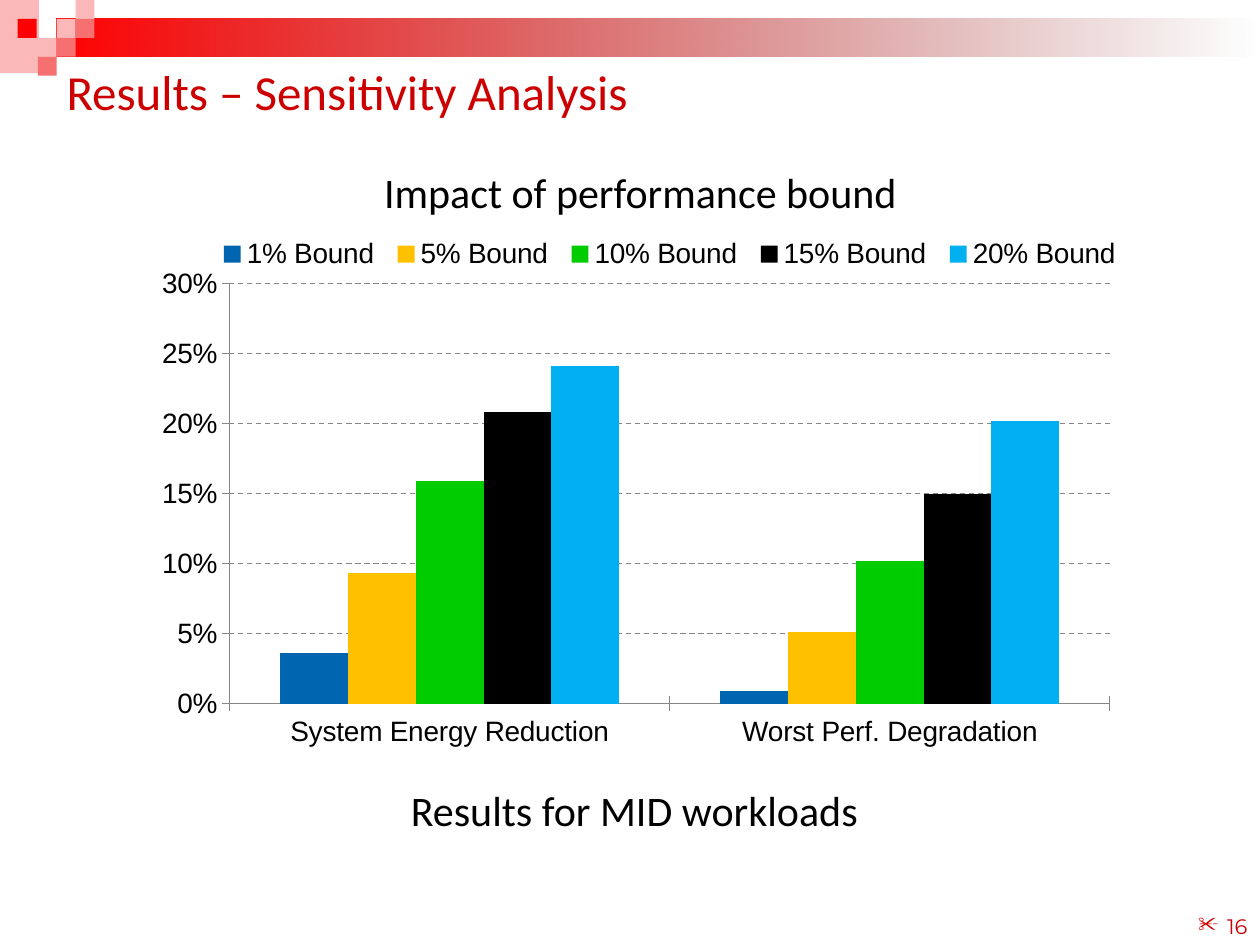
from typing import NamedTuple

from lxml import etree
from pptx import Presentation
from pptx.chart.data import CategoryChartData
from pptx.dml.color import RGBColor
from pptx.enum.chart import XL_CHART_TYPE, XL_LEGEND_POSITION, XL_TICK_MARK
from pptx.enum.dml import MSO_LINE
from pptx.enum.shapes import MSO_SHAPE
from pptx.enum.text import MSO_ANCHOR, PP_ALIGN
from pptx.oxml import parse_xml
from pptx.oxml.ns import nsdecls, qn
from pptx.util import Inches, Pt

RECTANGLE = MSO_SHAPE.RECTANGLE
CLUSTERED = XL_CHART_TYPE.COLUMN_CLUSTERED
LEFT, CENTER, RIGHT = PP_ALIGN.LEFT, PP_ALIGN.CENTER, PP_ALIGN.RIGHT
TOP, MIDDLE, BOTTOM = MSO_ANCHOR.TOP, MSO_ANCHOR.MIDDLE, MSO_ANCHOR.BOTTOM

RED = RGBColor(0xFF, 0x00, 0x00)
MAROON = RGBColor(0x76, 0x00, 0x00)
PINK = RGBColor(0xFA, 0xB8, 0xB8)
CORAL = RGBColor(0xF6, 0x70, 0x70)
CRIMSON = RGBColor(0xCC, 0x00, 0x00)
BLACK = RGBColor(0x00, 0x00, 0x00)
GRAY = RGBColor(0x86, 0x86, 0x86)
BLUE = RGBColor(0x00, 0x65, 0xB0)
AMBER = RGBColor(0xFF, 0xC0, 0x00)
GREEN = RGBColor(0x00, 0xCC, 0x00)
SKY = RGBColor(0x00, 0xB0, 0xF0)


class Block(NamedTuple):
    left: float
    top: float
    color: RGBColor
    width: float = 0.15
    height: float = 0.15


class Caption(NamedTuple):
    text: str
    left: float
    top: float
    width: float
    height: float
    size: int
    color: RGBColor = BLACK
    align: PP_ALIGN = LEFT
    anchor: MSO_ANCHOR = TOP
    font: str = "Calibri"


class Bound(NamedTuple):
    name: str
    values: tuple[float, float]
    color: RGBColor


CORNER = Block(0, 0, PINK, 0.31, 0.58)
BANNER = Block(0.45, 0.15, RED, 9.55, 0.3)
MOSAIC = [
    Block(0.45, 0.15, PINK),
    Block(0.6, 0, PINK),
    Block(0.6, 0.15, CORAL),
    Block(0.3, 0.3, PINK),
    Block(0.14, 0.15, RED),
    Block(0.45, 0.3, CORAL),
    Block(0.3, 0.45, CORAL),
]

PAGE_NUMBER = Caption("16", 7.67, 7, 2.33, 0.5, 12, CRIMSON, RIGHT, BOTTOM, "Montserrat")
TITLE = Caption("Results – Sensitivity Analysis", 0.43, 0.36, 9, 0.73, 28, CRIMSON,
                anchor=MIDDLE)
HEADING = Caption("Impact of performance bound", 2.95, 1.27, 4.57, 0.5, 24)
FOOTING = Caption("Results for MID workloads", 1.61, 6.18, 6.85, 0.5, 24, align=CENTER)

CATEGORIES = ("System Energy Reduction", "Worst Perf. Degradation")
BOUNDS = [
    Bound("1% Bound", (0.036, 0.009), BLUE),
    Bound("5% Bound", (0.093, 0.051), AMBER),
    Bound("10% Bound", (0.159, 0.102), GREEN),
    Bound("15% Bound", (0.208, 0.15), BLACK),
    Bound("20% Bound", (0.241, 0.202), SKY),
]


def draw_block(slide, block: Block):
    shape = slide.shapes.add_shape(RECTANGLE, Inches(block.left), Inches(block.top),
                                   Inches(block.width), Inches(block.height))
    shape.shadow.inherit = False
    shape.fill.solid()
    shape.fill.fore_color.rgb = block.color
    shape.line.fill.background()
    return shape


def fade_out(shape, start: RGBColor, end: RGBColor) -> None:
    """Fill from start to a fully transparent end, left to right."""
    shape.fill.gradient()
    shape.fill.gradient_angle = 0
    stops = shape.fill.gradient_stops
    for stop, color, position in zip(stops, (start, end), (0, 1)):
        stop.color.rgb = color
        stop.position = position
    end_color = shape.fill._xPr.findall(".//" + qn("a:srgbClr"))[-1]
    etree.SubElement(end_color, qn("a:alpha"), val="0")


def draw_caption(slide, caption: Caption, bullet: str = "") -> None:
    box = slide.shapes.add_textbox(Inches(caption.left), Inches(caption.top),
                                   Inches(caption.width), Inches(caption.height))
    frame = box.text_frame
    frame.word_wrap = True
    frame.vertical_anchor = caption.anchor
    frame.text = caption.text
    paragraph = frame.paragraphs[0]
    paragraph.alignment = caption.align
    if bullet:
        properties = paragraph._p.get_or_add_pPr()
        properties.set("marL", str(Inches(0.23)))
        properties.set("indent", str(-Inches(0.23)))
        etree.SubElement(properties, qn("a:buChar"), char=bullet)
    font = paragraph.runs[0].font
    font.name = caption.font
    font.size = Pt(caption.size)
    font.color.rgb = caption.color


def manual_layout(x: float, y: float, width: float, height: float, inner: bool = False):
    target = '<c:layoutTarget val="inner"/>' if inner else ""
    return parse_xml(
        f'<c:layout {nsdecls("c")}><c:manualLayout>{target}'
        '<c:xMode val="edge"/><c:yMode val="edge"/>'
        f'<c:x val="{x}"/><c:y val="{y}"/><c:w val="{width}"/><c:h val="{height}"/>'
        '</c:manualLayout></c:layout>')


def replace_layout(parent, layout, index: int) -> None:
    for old in parent.findall(qn("c:layout")):
        parent.remove(old)
    parent.insert(index, layout)


def draw_chart(slide) -> None:
    data = CategoryChartData(number_format="0%")
    data.categories = CATEGORIES
    for bound in BOUNDS:
        data.add_series(bound.name, bound.values)
    chart = slide.shapes.add_chart(CLUSTERED, Inches(1.02), Inches(1.21),
                                   Inches(8.03), Inches(5.21), data).chart
    chart.has_title = False
    chart.font.name = "Arial"
    chart.font.size = Pt(16)
    chart.font.color.rgb = BLACK

    # Clear background, so the heading behind stays visible
    space = chart._chartSpace
    space.find(qn("c:txPr")).addprevious(parse_xml(
        f'<c:spPr {nsdecls("c", "a")}><a:noFill/><a:ln><a:noFill/></a:ln></c:spPr>'))
    replace_layout(space.find(".//" + qn("c:plotArea")),
                   manual_layout(0.1, 0.2, 0.87, 0.64, inner=True), 0)

    # Columns
    plot = chart.plots[0]
    plot.gap_width = 150
    plot.overlap = 0
    plot.vary_by_categories = False
    for series, bound in zip(plot.series, BOUNDS):
        series.format.fill.solid()
        series.format.fill.fore_color.rgb = bound.color

    # Axes
    shares = chart.value_axis
    shares.minimum_scale, shares.maximum_scale, shares.major_unit = 0, 0.3, 0.05
    shares.tick_labels.number_format = "0%"
    shares.tick_labels.number_format_is_linked = False
    shares.major_tick_mark = XL_TICK_MARK.OUTSIDE
    shares.has_major_gridlines = True
    chart.category_axis.major_tick_mark = XL_TICK_MARK.CROSS
    for line in (shares.format.line, chart.category_axis.format.line,
                 shares.major_gridlines.format.line):
        line.color.rgb = GRAY
        line.width = Pt(0.75)
    shares.major_gridlines.format.line.dash_style = MSO_LINE.DASH

    # Legend
    chart.has_legend = True
    legend = chart.legend
    legend.position = XL_LEGEND_POSITION.TOP
    legend.include_in_layout = False
    legend.font.size = Pt(16)
    replace_layout(legend._element, manual_layout(0.08, 0.12, 0.91, 0.07), 1)


def main() -> None:
    deck = Presentation()
    deck.slide_width, deck.slide_height = Inches(10), Inches(7.5)
    slide = deck.slides.add_slide(deck.slide_layouts[6])

    # Header decoration
    draw_block(slide, CORNER)
    fade_out(draw_block(slide, BANNER), RED, MAROON)
    for block in MOSAIC:
        draw_block(slide, block)

    # Content
    draw_caption(slide, PAGE_NUMBER, bullet="✂")
    draw_caption(slide, TITLE)
    draw_caption(slide, HEADING)
    draw_chart(slide)
    draw_caption(slide, FOOTING)
    deck.save("out.pptx")


if __name__ == "__main__":
    main()
